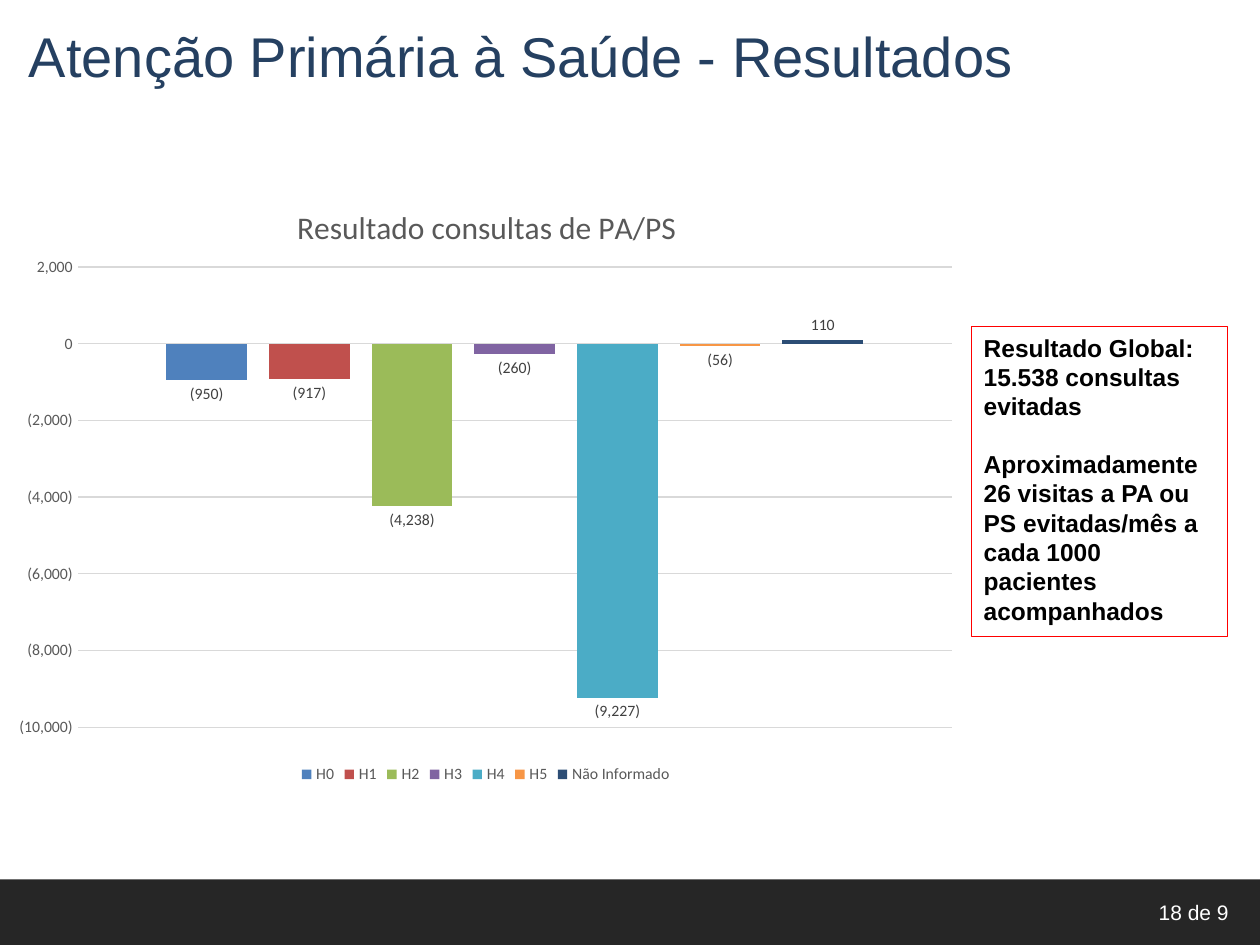
from lxml import etree
from pptx import Presentation
from pptx import util as u
from pptx.chart.data import CategoryChartData
from pptx.dml.color import RGBColor
from pptx.enum import chart as charts, shapes, text
from pptx.oxml import parse_xml
from pptx.oxml.ns import nsdecls, qn

NAVY = RGBColor(0x25, 0x40, 0x61)
CHARCOAL = RGBColor(0x26, 0x26, 0x26)
WHITE = RGBColor(0xFF, 0xFF, 0xFF)
BLACK = RGBColor(0, 0, 0)
RED = RGBColor(0xFF, 0, 0)
GRAY = RGBColor(0x59, 0x59, 0x59)
LABEL_GRAY = RGBColor(0x40, 0x40, 0x40)
GRID_GRAY = RGBColor(0xD9, 0xD9, 0xD9)
NUMBER_FORMAT = r"#,##0;\(#,##0\)"

HOSPITALS = [
    ("H0", -950, RGBColor(0x4F, 0x81, 0xBD)),
    ("H1", -917, RGBColor(0xC0, 0x50, 0x4D)),
    ("H2", -4238, RGBColor(0x9B, 0xBB, 0x59)),
    ("H3", -260, RGBColor(0x80, 0x64, 0xA2)),
    ("H4", -9227, RGBColor(0x4B, 0xAC, 0xC6)),
    ("H5", -56, RGBColor(0xF7, 0x96, 0x46)),
    ("Não Informado", 110, RGBColor(0x2C, 0x4D, 0x75)),
]


def style_font(font, name, size, color, bold=False):
    font.name, font.size, font.bold = name, u.Pt(size), bold
    font.color.rgb = color


def set_layout(element, index, **fractions):
    """Place a chart part by fractions (x, y, w, h) of the chart area."""
    old = element.find(qn("c:layout"))
    if old is not None:
        element.remove(old)
    layout = parse_xml(f"<c:layout {nsdecls('c')}><c:manualLayout/></c:layout>")
    manual = layout[0]
    if "w" in fractions:
        etree.SubElement(manual, qn("c:layoutTarget")).set("val", "inner")
    for side in "xy":
        etree.SubElement(manual, qn(f"c:{side}Mode")).set("val", "edge")
    for side, value in fractions.items():
        etree.SubElement(manual, qn(f"c:{side}")).set("val", str(value))
    element.insert(index, layout)


class SlideBuilder:
    """Holds the text font and the slide being filled."""

    def __init__(self, slide, font="Arial"):
        self.slide = slide
        self.font = font

    def add_text(self, frame, paragraphs, size, color, bold=False,
                 align=text.PP_ALIGN.LEFT, anchor=text.MSO_ANCHOR.TOP, gap=0):
        frame.word_wrap = True
        frame.auto_size = text.MSO_AUTO_SIZE.NONE
        frame.vertical_anchor = anchor
        for index, content in enumerate(paragraphs):
            paragraph = frame.add_paragraph() if index else frame.paragraphs[0]
            paragraph.alignment = align
            paragraph.space_before = u.Pt(gap if index else 0)
            run = paragraph.add_run()
            run.text = content
            style_font(run.font, self.font, size, color, bold)

    def title(self, content, left, top, width, height):
        shape = self.slide.shapes.title
        shape.left, shape.top, shape.width, shape.height = left, top, width, height
        self.add_text(shape.text_frame, [content], 32, NAVY)

    def rectangle(self, left, top, width, height, fill=None, line=None):
        shape = self.slide.shapes.add_shape(
            shapes.MSO_SHAPE.RECTANGLE, left, top, width, height)
        shape.shadow.inherit = False
        if fill is None:
            shape.fill.background()
        else:
            shape.fill.solid()
            shape.fill.fore_color.rgb = fill
        if line is None:
            shape.line.fill.background()
        else:
            shape.line.color.rgb = line
            shape.line.width = u.Pt(0.75)
        return shape

    def text_box(self, content, left, top, width, height):
        box = self.slide.shapes.add_textbox(left, top, width, height)
        self.add_text(box.text_frame, [content], 12, WHITE, align=text.PP_ALIGN.RIGHT)

    def column_chart(self, title, rows, left, top, width, height):
        data = CategoryChartData(number_format=NUMBER_FORMAT)
        data.categories = ["1"]
        for name, value, _ in rows:
            data.add_series(name, [value])
        chart = self.slide.shapes.add_chart(
            charts.XL_CHART_TYPE.COLUMN_CLUSTERED, left, top, width, height, data).chart
        style_font(chart.font, "Calibri", 10, BLACK)

        run = chart.chart_title.text_frame.paragraphs[0].add_run()
        run.text = title
        style_font(run.font, "Calibri", 18, GRAY)
        set_layout(chart.chart_title._element, 1, x=0.3, y=0.04)
        set_layout(chart._chartSpace.chart.plotArea, 0, x=0.08, y=0.15, w=0.9, h=0.75)

        chart.has_legend = True
        chart.legend.position = charts.XL_LEGEND_POSITION.BOTTOM
        chart.legend.include_in_layout = False
        style_font(chart.legend.font, "Calibri", 9, GRAY)

        chart.category_axis.visible = False
        axis = chart.value_axis
        axis.minimum_scale, axis.maximum_scale, axis.major_unit = -10000, 2000, 2000
        axis.major_tick_mark = axis.minor_tick_mark = charts.XL_TICK_MARK.NONE
        axis.format.line.fill.background()
        axis.major_gridlines.format.line.color.rgb = GRID_GRAY
        axis.major_gridlines.format.line.width = u.Pt(0.75)
        axis.tick_labels.number_format = NUMBER_FORMAT
        axis.tick_labels.number_format_is_linked = False
        style_font(axis.tick_labels.font, "Calibri", 9, GRAY)

        plot = chart.plots[0]
        plot.gap_width, plot.overlap, plot.vary_by_categories = 219, -27, False
        for series, (_, _, color) in zip(plot.series, rows):
            series.invert_if_negative = False
            series.format.fill.solid()
            series.format.fill.fore_color.rgb = color
            labels = series.data_labels
            labels.show_value = True
            labels.position = charts.XL_LABEL_POSITION.OUTSIDE_END
            labels.number_format = NUMBER_FORMAT
            labels.number_format_is_linked = False
            style_font(labels.font, "Calibri", 9, LABEL_GRAY)


def main():
    presentation = Presentation()
    presentation.slide_width, presentation.slide_height = u.Cm(25.4), u.Cm(19.05)
    title_only = presentation.slide_layouts[5]
    builder = SlideBuilder(presentation.slides.add_slide(title_only))

    builder.rectangle(0, u.Cm(17.73), u.Cm(25.4), u.Cm(1.32), fill=CHARCOAL)
    builder.text_box("18 de 9", u.Cm(16.31), u.Cm(18), u.Cm(8.71), u.Cm(0.76))
    builder.title("Atenção Primária à Saúde - Resultados",
                  u.Cm(0.33), u.Cm(0.3), u.Cm(24.74), u.Cm(1.63))
    builder.column_chart("Resultado consultas de PA/PS", HOSPITALS,
                         0, u.Cm(3.53), u.Cm(19.58), u.Cm(12.37))
    summary = builder.rectangle(u.Cm(19.58), u.Cm(6.58), u.Cm(5.16), u.Cm(6.25), line=RED)
    builder.add_text(summary.text_frame, [
        "Resultado Global: 15.538 consultas evitadas",
        "Aproximadamente 26 visitas a PA ou PS evitadas/mês a cada 1000 "
        "pacientes acompanhados",
    ], 14, BLACK, bold=True, gap=16)

    presentation.save("out.pptx")


if __name__ == "__main__":
    main()
